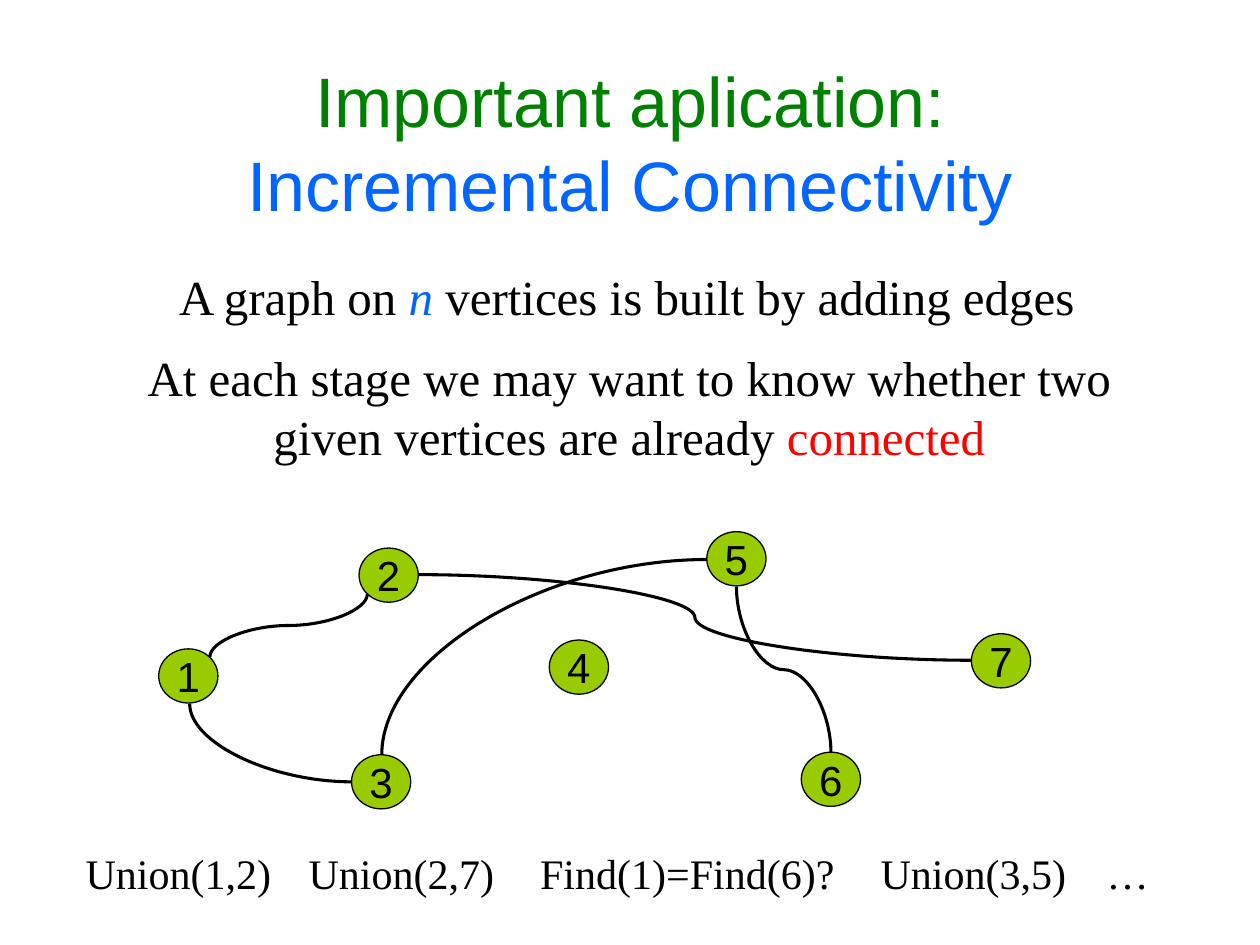
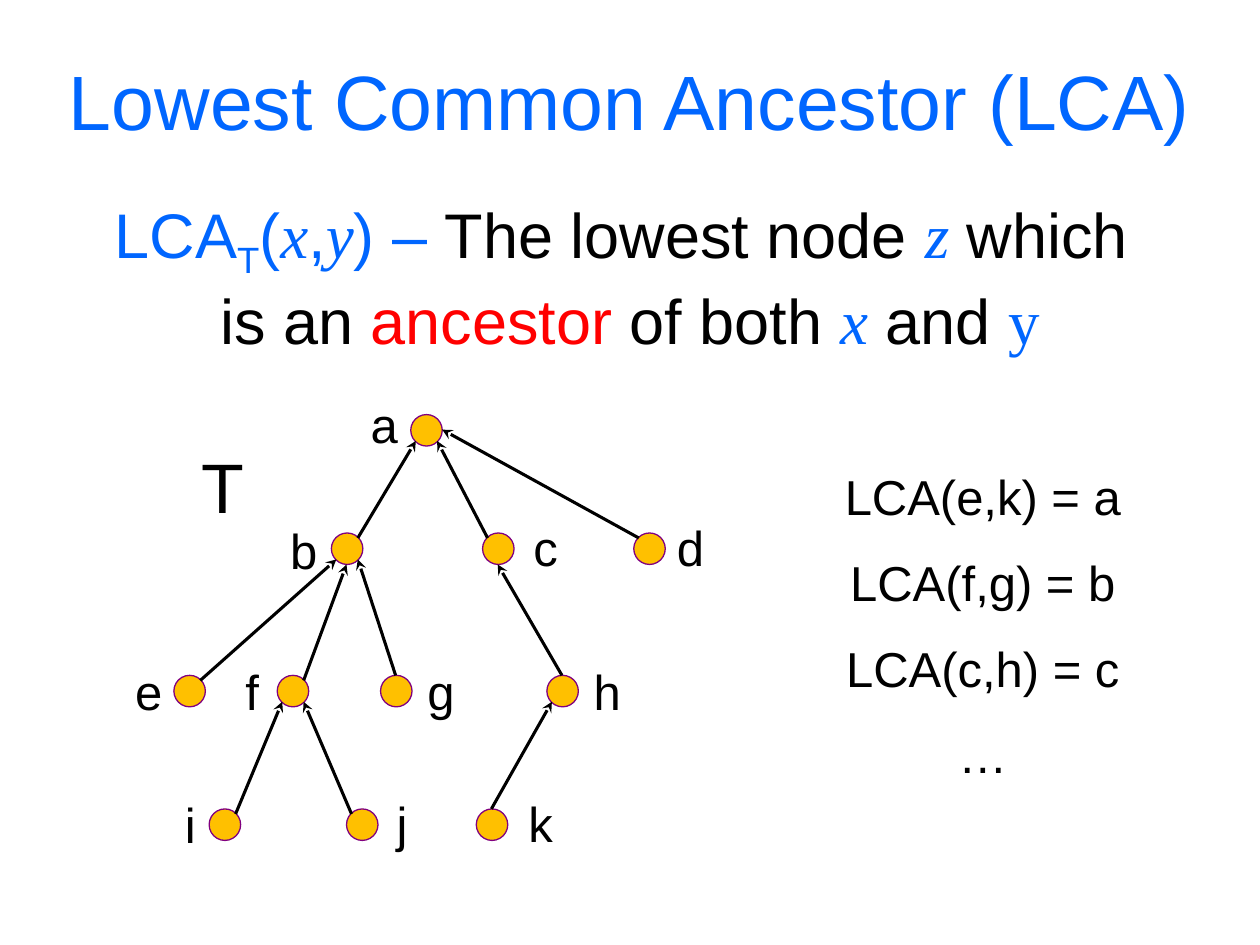
from pptx import Presentation
from pptx.dml.color import RGBColor
from pptx.enum.shapes import MSO_CONNECTOR, MSO_SHAPE
from pptx.enum.text import MSO_ANCHOR, PP_ALIGN
from pptx.oxml.ns import qn
from pptx.util import Pt
from lxml.etree import SubElement

PX = 9144
BLACK, BLUE, GREEN, RED = "000000", "0066FF", "008000", "FF0000"
LIME, GOLD, PLUM = "99CC00", "FFC000", "800080"
SANS, SERIF = "Arial", "Times New Roman"
MATH = {"ink": BLUE, "name": SERIF, "italic": True}


def hue(code):
    return RGBColor.from_string(code)


def write(frame, paras, size, face, ink=BLACK, anchor=MSO_ANCHOR.TOP, wrap=True):
    frame.word_wrap = wrap
    frame.vertical_anchor = anchor
    for i, parts in enumerate(paras):
        para = frame.add_paragraph() if i else frame.paragraphs[0]
        para.alignment = PP_ALIGN.CENTER
        para.space_before = Pt(15.5 if i else 0)
        for text, style in parts:
            if text == "\n":
                para.add_line_break()
                SubElement(para._p[-1], qn("a:rPr"), sz="4400")
                continue
            run = para.add_run()
            run.text = text
            form = {"size": Pt(size), "name": face, "ink": ink} | style
            run.font.color.rgb = hue(form.pop("ink"))
            if "base" in form:
                run._r.get_or_add_rPr().set("baseline", form.pop("base"))
            for key, val in form.items():
                setattr(run.font, key, val)


deck = Presentation()
deck.slide_width, deck.slide_height = 1000 * PX, 750 * PX
graph, tree = [deck.slides.add_slide(deck.slide_layouts[6]).shapes for _ in range(2)]

texts = [
    (graph, (50, 49, 900, 126), 40, SANS, MSO_ANCHOR.MIDDLE, [[
        ("Important aplication:", {"ink": GREEN}), ("\n", {}),
        ("Incremental Connectivity", {"ink": BLUE})]]),
    (graph, (76, 207, 843, 57), 28, SERIF, MSO_ANCHOR.TOP, [[
        ("A graph on ", {}), ("n", MATH), (" vertices is built by adding edges", {})]]),
    (graph, (78, 271, 843, 104), 28, SERIF, MSO_ANCHOR.TOP, [[
        ("At each stage we may want to know whether two given vertices are already ", {}),
        ("connected", {"ink": RED})]]),
    (tree, (0, 21, 1000, 116), 44, SANS, MSO_ANCHOR.MIDDLE, [[
        ("Lowest Common Ancestor (LCA)", {"ink": BLUE})]]),
    (tree, (0, 161, 1000, 116), 36, SANS, MSO_ANCHOR.MIDDLE, [[
        ("LCA", {"ink": BLUE}), ("T", {"ink": BLUE, "base": "-25000"}),
        ("(", {"ink": BLUE}), ("x", MATH), (",", {"ink": BLUE}), ("y", MATH),
        (") – ", {"ink": BLUE}), ("The lowest node ", {}), ("z", MATH),
        (" which ", {}), ("\n", {}), ("is an ", {}), ("ancestor", {"ink": RED}),
        (" of both ", {}), ("x", MATH), (" and ", {}),
        ("y", {"ink": BLUE, "name": SERIF})]]),
    (tree, (636, 365, 288, 269), 28, SANS, MSO_ANCHOR.TOP, [
        [(line, {})] for line in
        ("LCA(e,k) = a", "LCA(f,g) = b", "LCA(c,h) = c", "…")]),
    (tree, (150, 347, 42, 77), 40, SANS, MSO_ANCHOR.TOP, [[("T", {})]]),
]

left = 53
for call, wide in (("Union(1,2)", 177), ("Union(2,7)", 177), ("Find(1)=Find(6)?", 277),
                   ("Union(3,5)", 177), ("…", 68)):
    texts.append((graph, (left, 668, wide, 50), 24, SERIF, MSO_ANCHOR.TOP, [[(call, {})]]))
    left += wide

nodes = {
    "a": (326, 329, 284, 308), "b": (263, 423, 220, 408), "c": (383, 423, 412, 406),
    "d": (503, 423, 527, 406), "e": (138, 536, 97, 520), "f": (220, 536, 179, 520),
    "g": (302, 536, 329, 520), "h": (434, 536, 461, 520), "i": (166, 642, 130, 626),
    "j": (275, 642, 298, 625), "k": (378, 642, 408, 625),
}
for name, (_, _, x, y) in nodes.items():
    texts.append((tree, (x, y, 42, 57), 28, SANS, MSO_ANCHOR.TOP, [[(name, {})]]))

for page, area, size, face, anchor, paras in texts:
    box = page.add_textbox(*[n * PX for n in area])
    write(box.text_frame, paras, size, face, anchor=anchor)

spots = {"1": (126, 515), "3": (279, 599), "7": (771, 503), "5": (561, 422),
         "6": (636, 597), "4": (436, 508), "2": (285, 435)}
discs = [(graph, x, y, 47, 43, LIME, BLACK, name) for name, (x, y) in spots.items()]
discs += [(tree, x, y, 25, 25, GOLD, PLUM, "") for x, y, _, _ in nodes.values()]
for page, x, y, wide, high, fill, edge, name in discs:
    disc = page.add_shape(MSO_SHAPE.OVAL, x * PX, y * PX, wide * PX, high * PX)
    disc.shadow.inherit = False
    disc.fill.solid()
    disc.fill.fore_color.rgb = hue(fill)
    disc.line.color.rgb = hue(edge)
    disc.line.width = Pt(0.75)
    if name:
        write(disc.text_frame, [[(name, {})]], 24, SANS,
              anchor=MSO_ANCHOR.MIDDLE, wrap=False)

links = [
    (graph, (254, 559, 204, 434), 90, "curvedConnector3"),
    (graph, (332, 456, 771, 524), 180, "curvedConnector3"),
    (graph, (303, 599, 561, 444), 180, "curvedConnector2"),
    (graph, (556, 569, 688, 494), 270, "curvedConnector3"),
    (graph, (246, 525, 184, 654), 270, "curvedConnector2"),
]
sites = {"nw": (4, 4), "n": (12, 0), "ne": (21, 4), "e": (25, 12),
         "sw": (4, 21), "s": (12, 25), "se": (21, 21)}
for child, out, top, into in (
        ("b", "ne", "a", "sw"), ("c", "nw", "a", "se"), ("e", "ne", "b", "sw"),
        ("f", "ne", "b", "s"), ("g", "n", "b", "se"), ("d", "nw", "a", "e"),
        ("h", "n", "c", "s"), ("i", "ne", "f", "sw"), ("j", "nw", "f", "se"),
        ("k", "n", "h", "sw")):
    ends = [nodes[name][k] + sites[side][k]
            for name, side in ((child, out), (top, into)) for k in (0, 1)]
    links.append((tree, ends, 0, ""))

for page, ends, turn, curve in links:
    kind = MSO_CONNECTOR.CURVE if curve else MSO_CONNECTOR.STRAIGHT
    link = page.add_connector(kind, *[n * PX for n in ends])
    link.line.color.rgb = hue(BLACK)
    link.line.width = Pt(1.75)
    props = link._element.spPr
    if curve:
        props.find(qn("a:xfrm")).set("rot", str(turn * 60000))
        props.find(qn("a:prstGeom")).set("prst", curve)
    else:
        SubElement(props.find(qn("a:ln")), qn("a:tailEnd"), type="stealth")
    SubElement(props, qn("a:effectLst"))

deck.save("out.pptx")
